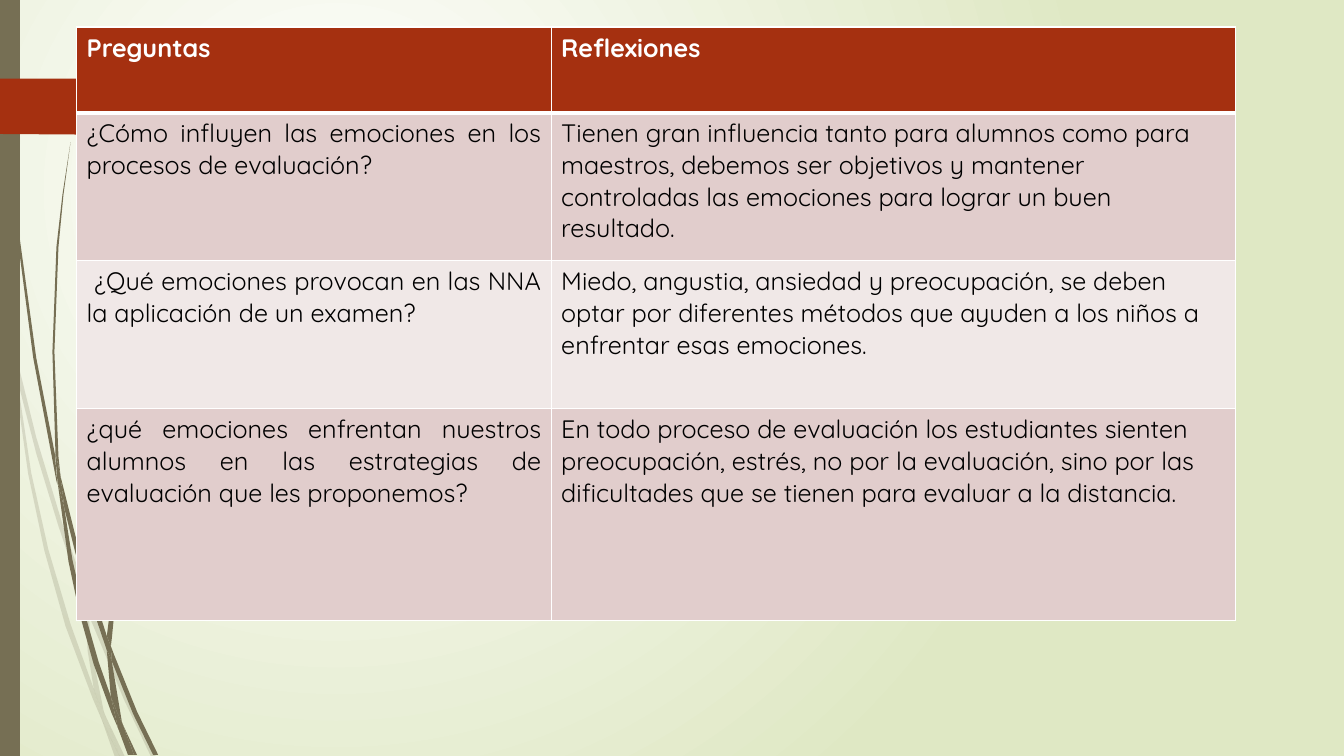
from lxml import etree
from pptx import Presentation
from pptx import util as u
from pptx.dml.color import RGBColor
from pptx.enum import shapes, text
from pptx.oxml import parse_xml
from pptx.oxml.ns import nsdecls, qn

OLIVE = RGBColor(0x76, 0x6F, 0x54)
RUST = RGBColor(0xA5, 0x30, 0x10)
ROSE = RGBColor(0xE1, 0xCD, 0xCC)
PALE_ROSE = RGBColor(0xF0, 0xE8, 0xE7)
WHITE = RGBColor(0xFF, 0xFF, 0xFF)
BLACK = RGBColor(0, 0, 0)
LEAF_GREEN = RGBColor(0xDF, 0xE8, 0xC4)
FONT = "Quicksand"
GRID = u.Cm(0.0254)  # one outline unit

# Outlines of the grass blades, in outline units
LIGHT_BLADES = [
    [(11, 350), (9, 322), (0, 282), (0, 299), (10, 344)],
    [(58, 522), (84, 599), (85, 586), (62, 520), (36, 434), (14, 345),
     (17, 376), (36, 450)],
    [(92, 607), (88, 596), (88, 610), (123, 694), (150, 751), (155, 751),
     (127, 692)],
    [(119, 751), (124, 751), (105, 711)],
    [(93, 683), (70, 619), (48, 545), (31, 469), (17, 376), (11, 350),
     (28, 470), (44, 546), (65, 621), (92, 693), (101, 714), (99, 707)],
    [(84, 599), (87, 646), (93, 683), (96, 692), (105, 711), (103, 706),
     (91, 646), (88, 610), (88, 608)],
    [(88, 584), (93, 522), (110, 462), (132, 405), (160, 349), (192, 296),
     (229, 245), (268, 198), (290, 175), (312, 154), (312, 153), (289, 175),
     (268, 197), (228, 244), (190, 295), (158, 348), (129, 404), (107, 461),
     (91, 522), (85, 584), (85, 586), (88, 596)],
    [(101, 714), (114, 751), (119, 751)],
    [(88, 608), (88, 610), (88, 596), (85, 586), (84, 599)],
    [(96, 692), (93, 683), (99, 707), (101, 714), (119, 751), (105, 711)],
]
DARK_BLADES = [
    [(7, 110), (17, 233), (33, 355), (56, 477), (57, 481), (55, 457),
     (55, 453), (36, 355), (19, 232), (8, 109), (5, 48), (4, 0), (3, 0),
     (4, 48)],
    [(88, 592), (106, 645), (106, 631), (93, 590), (75, 532), (60, 472),
     (64, 505), (75, 549)],
    [(113, 649), (110, 641), (111, 656), (132, 708), (152, 749), (157, 749),
     (136, 706)],
    [(110, 691), (98, 657), (84, 608), (72, 556), (64, 505), (57, 477),
     (68, 557), (79, 609), (93, 659), (111, 708), (117, 722), (116, 717)],
    [(60, 472), (58, 453), (54, 349), (58, 245), (63, 193), (70, 141),
     (62, 193), (56, 245), (52, 349), (55, 449)],
    [(133, 749), (136, 749), (122, 719)],
    [(57, 477), (64, 505), (60, 472), (55, 449), (55, 453)],
    [(111, 633), (115, 592), (125, 552), (140, 513), (158, 476), (180, 440),
     (205, 406), (231, 374), (245, 359), (261, 344), (260, 344), (245, 358),
     (231, 373), (204, 405), (178, 439), (156, 474), (137, 512), (122, 551),
     (111, 591), (106, 631), (110, 641)],
    [(117, 722), (127, 749), (131, 749)],
    [(106, 645), (110, 691), (116, 706), (122, 719), (121, 716), (111, 656),
     (109, 651)],
    [(106, 645), (109, 651), (111, 656), (110, 641), (106, 631)],
    [(116, 706), (110, 691), (116, 717), (117, 722), (130, 749), (133, 749),
     (122, 719)],
]
TAG = [(0, 78), (146, 78), (148, 79), (173, 104), (174, 106), (173, 108),
       (148, 133), (146, 134), (0, 133)]

COLUMN_WIDTHS = [11.96, 17.25]
ROW_HEIGHTS = [2.16, 3.73, 3.73, 5.33]
ROWS = [
    ("Preguntas", "Reflexiones"),
    ("¿Cómo influyen las emociones en los procesos de evaluación?",
     "Tienen gran influencia tanto para alumnos como para maestros, debemos "
     "ser objetivos y mantener controladas las emociones para lograr un buen "
     "resultado."),
    (" ¿Qué emociones provocan en las NNA la aplicación de un examen?",
     "Miedo, angustia, ansiedad y preocupación, se deben optar por diferentes "
     "métodos que ayuden a los niños a enfrentar esas emociones."),
    ("¿qué emociones enfrentan nuestros alumnos en las estrategias de "
     "evaluación que les proponemos?",
     "En todo proceso de evaluación los estudiantes sienten preocupación, "
     "estrés, no por la evaluación, sino por las dificultades que se tienen "
     "para evaluar a la distancia."),
]


def set_background(slide):
    """Radial gradient, white towards the upper left."""
    background = parse_xml(
        f'<p:bg {nsdecls("p", "a")}><p:bgPr><a:gradFill rotWithShape="1"><a:gsLst>'
        f'<a:gs pos="0"><a:srgbClr val="{WHITE}"/></a:gs>'
        f'<a:gs pos="100000"><a:srgbClr val="{LEAF_GREEN}"/></a:gs></a:gsLst>'
        '<a:path path="circle"><a:fillToRect l="50000" t="50000" r="100000" '
        'b="100000"/></a:path></a:gradFill><a:effectLst/></p:bgPr></p:bg>')
    slide.element.find(qn("p:cSld")).insert(0, background)


def paint(shape, color, opacity=100):
    shape.shadow.inherit = False
    shape.fill.solid()
    shape.fill.fore_color.rgb = color
    shape.line.fill.background()
    if opacity < 100:
        color_element = shape.element.spPr.find(qn("a:solidFill"))[0]
        etree.SubElement(color_element, qn("a:alpha"), val=str(opacity * 1000))


def add_outline(container, points, color, opacity=100):
    builder = container.build_freeform(*points[0], scale=GRID)
    builder.add_line_segments(points[1:], close=True)
    paint(builder.convert_to_shape(), color, opacity)


def add_grass(slide, blades, opacity=100):
    group = slide.shapes.add_group_shape()
    for blade in blades:
        add_outline(group.shapes, blade, OLIVE, opacity)


def set_borders(cell, **widths):
    """White borders; widths in points by side, in the order L, R, T, B."""
    properties = cell._tc.get_or_add_tcPr()
    for position, (side, width) in enumerate(widths.items()):
        properties.insert(position, parse_xml(
            f'<a:ln{side} {nsdecls("a")} w="{u.Pt(width)}"><a:solidFill>'
            f'<a:srgbClr val="{WHITE}"/></a:solidFill></a:ln{side}>'))


def fill_cell(cell, wording, row, column):
    header = row == 0
    cell.fill.solid()
    cell.fill.fore_color.rgb = RUST if header else (ROSE if row % 2 else PALE_ROSE)
    set_borders(cell, L=1, R=1, T=3 if row == 1 else 1, B=3 if header else 1)
    paragraph = cell.text_frame.paragraphs[0]
    if column == 0 and not header:
        paragraph.alignment = text.PP_ALIGN.JUSTIFY
    run = paragraph.add_run()
    run.text = wording
    run.font.name = FONT
    run.font.size = u.Pt(18)
    run.font.bold = header
    run.font.color.rgb = WHITE if header else BLACK


def add_question_table(slide):
    table = slide.shapes.add_table(
        len(ROWS), len(COLUMN_WIDTHS), u.Cm(1.93), u.Cm(0.68),
        u.Cm(sum(COLUMN_WIDTHS)), u.Cm(sum(ROW_HEIGHTS))).table
    for column, width in zip(table.columns, COLUMN_WIDTHS):
        column.width = u.Cm(width)
    for row, height in zip(table.rows, ROW_HEIGHTS):
        row.height = u.Cm(height)
    for row, wordings in enumerate(ROWS):
        for column, wording in enumerate(wordings):
            fill_cell(table.cell(row, column), wording, row, column)


def main():
    presentation = Presentation()
    presentation.slide_width = u.Cm(33.87)
    presentation.slide_height = u.Cm(19.05)
    slide = presentation.slides.add_slide(presentation.slide_layouts[6])

    # Backdrop: gradient, grass, side bar and tag
    set_background(slide)
    add_grass(slide, LIGHT_BLADES, opacity=20)
    add_grass(slide, DARK_BLADES)
    side_bar = slide.shapes.add_shape(
        shapes.MSO_SHAPE.RECTANGLE, 0, 0, u.Cm(0.5), presentation.slide_height)
    paint(side_bar, OLIVE)
    add_outline(slide.shapes, TAG, RUST)

    # Questions and reflections
    add_question_table(slide)
    presentation.save("out.pptx")


if __name__ == "__main__":
    main()
